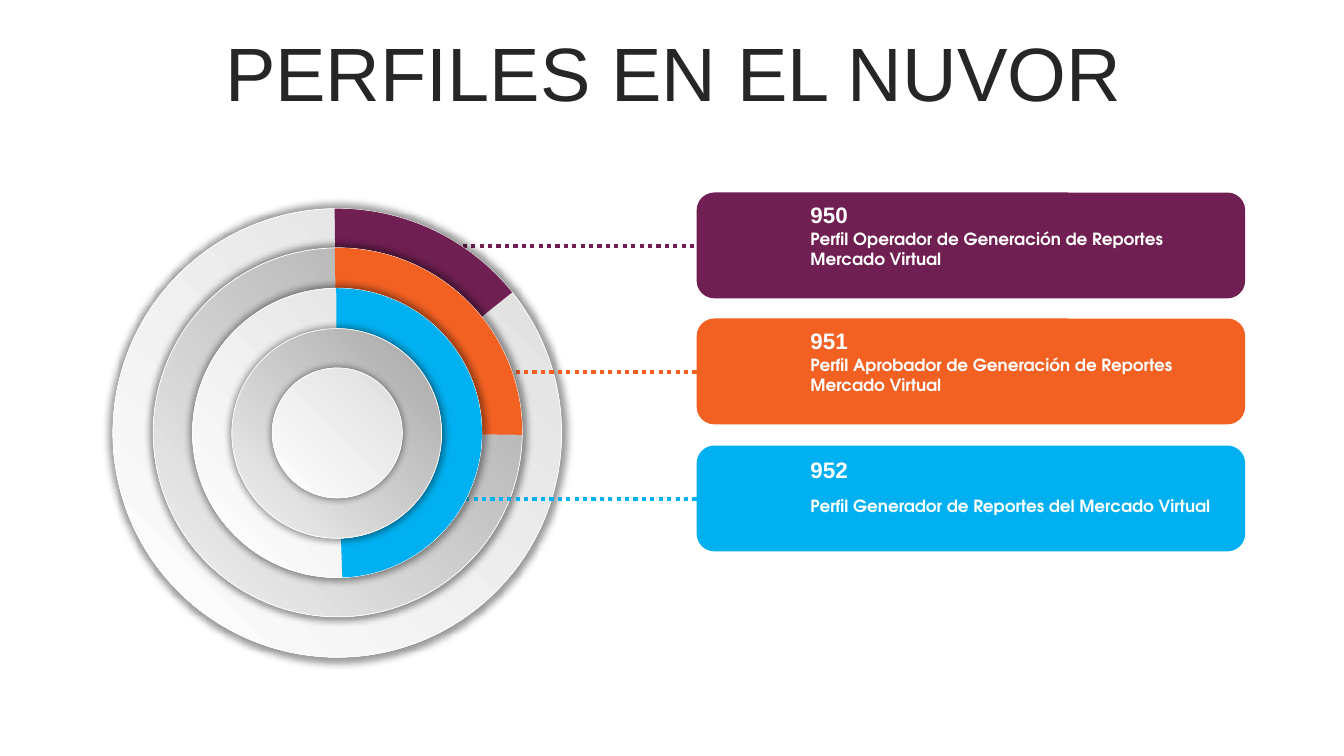
from dataclasses import dataclass

from lxml.etree import SubElement
from pptx import Presentation
from pptx.dml.color import RGBColor
from pptx.enum.dml import MSO_LINE
from pptx.enum.shapes import MSO_CONNECTOR, MSO_SHAPE
from pptx.enum.text import MSO_ANCHOR, MSO_AUTO_SIZE, PP_ALIGN
from pptx.oxml.ns import qn
from pptx.shapes.autoshape import Shape
from pptx.slide import Slide
from pptx.text.text import TextFrame
from pptx.util import Emu, Pt

EMU_PER_PX = 9144
CENTER_X, CENTER_Y = 334.5, 429.5
OUTER_DIAMETER, DIAMETER_STEP, RING_COUNT = 445, 79, 5
CARD_LEFT, CARD_WIDTH, CARD_HEIGHT = 691, 544, 105
TEXT_LEFT = 794


@dataclass(frozen=True)
class Theme:
    purple: str = "6F1F51"
    orange: str = "F26122"
    blue: str = "00B0F0"
    white: str = "FFFFFF"
    shadow: str = "000000"
    title_color: str = "262626"
    light_ring: tuple[str, str] = ("DEDEDE", "FFFFFF")
    dark_ring: tuple[str, str] = ("A6A6A6", "F2F2F2")
    heading_font: str = "Arial"
    body_font: str = "TeX Gyre Adventor"
    title_size: int = 54
    code_size: int = 16
    label_size: int = 12


@dataclass(frozen=True)
class Profile:
    code: str
    label: str
    color: str
    card_top: int
    code_top: int
    label_top: int
    label_width: int
    line_left: int
    start_angle: float
    end_angle: float


THEME = Theme()
PROFILES = [
    Profile("950", "Perfil Operador de Generación de Reportes Mercado Virtual",
            THEME.purple, 191, 195, 222, 419, 434, 269.33, 321.19),
    Profile("951", "Perfil Aprobador de Generación de Reportes Mercado Virtual",
            THEME.orange, 316, 320, 347, 440, 453, 269.1, 0.77),
    Profile("952", "Perfil Generador de Reportes del Mercado Virtual",
            THEME.blue, 442, 448, 487, 419, 453, 269.61, 87.97),
]


def px(length: float) -> Emu:
    return Emu(round(length) * EMU_PER_PX)


def rgb(color: str) -> RGBColor:
    return RGBColor.from_string(color)


def write_text(frame: TextFrame, text: str, *, font: str, size: int, color: str,
               bold: bool = False, align: PP_ALIGN = PP_ALIGN.LEFT,
               anchor: MSO_ANCHOR = MSO_ANCHOR.TOP,
               line_spacing: float = 1.0, space_before: int = 0) -> None:
    frame.word_wrap = True
    frame.auto_size = MSO_AUTO_SIZE.NONE
    frame.vertical_anchor = anchor
    para = frame.paragraphs[0]
    para.alignment = align
    para.line_spacing = line_spacing
    para.space_before = Pt(space_before)
    span = para.add_run()
    span.text = text
    span.font.name = font
    span.font.size = Pt(size)
    span.font.bold = bold
    span.font.color.rgb = rgb(color)


def add_title(page: Slide, text: str) -> None:
    title = page.shapes.title
    title.left, title.top, title.width, title.height = px(35), px(37), px(1266), px(79)
    write_text(title.text_frame, text, font=THEME.heading_font, size=THEME.title_size,
               color=THEME.title_color, align=PP_ALIGN.CENTER, anchor=MSO_ANCHOR.MIDDLE,
               line_spacing=0.9, space_before=10)


def add_shape(page: Slide, kind: MSO_SHAPE, left: float, top: float,
              width: int, height: int, color: str) -> Shape:
    shape = page.shapes.add_shape(kind, px(left), px(top), px(width), px(height))
    shape.shadow.inherit = False
    shape.fill.solid()
    shape.fill.fore_color.rgb = rgb(color)
    shape.line.fill.background()
    return shape


def add_circle_shape(page: Slide, kind: MSO_SHAPE, diameter: int, color: str) -> Shape:
    return add_shape(page, kind, CENTER_X - diameter / 2, CENTER_Y - diameter / 2,
                     diameter, diameter, color)


def add_glow_shadow(shape: Shape) -> None:
    effects = shape.element.spPr.find(qn("a:effectLst"))
    shadow = SubElement(effects, qn("a:outerShdw"), blurRad=str(Pt(5)), dist="0", dir="0",
                        sx="102000", sy="102000", algn="ctr", rotWithShape="0")
    tint = SubElement(shadow, qn("a:srgbClr"), val=THEME.shadow)
    SubElement(tint, qn("a:alpha"), val="40000")


def add_ring(page: Slide, diameter: int, shades: tuple[str, str]) -> None:
    ring = add_circle_shape(page, MSO_SHAPE.OVAL, diameter, shades[0])
    ring.fill.gradient()
    ring.fill.gradient_angle = 225
    for stop, position, shade in zip(ring.fill.gradient_stops, (0, 1), shades):
        stop.position = position
        stop.color.rgb = rgb(shade)
    ring.line.color.rgb = rgb(THEME.white)
    ring.line.width = Pt(0.5)
    add_glow_shadow(ring)


def add_sector(page: Slide, diameter: int, profile: Profile) -> None:
    sector = add_circle_shape(page, MSO_SHAPE.PIE, diameter, profile.color)
    for index, angle in enumerate((profile.start_angle, profile.end_angle)):
        sector.adjustments[index] = angle * 0.6


def add_leader(page: Slide, profile: Profile) -> None:
    height = px(profile.card_top + CARD_HEIGHT // 2 + 1)
    leader = page.shapes.add_connector(MSO_CONNECTOR.STRAIGHT, px(profile.line_left), height,
                                       px(CARD_LEFT), height)
    leader.line.color.rgb = rgb(profile.color)
    leader.line.width = Pt(3)
    leader.line.dash_style = MSO_LINE.ROUND_DOT
    SubElement(leader.element.spPr, qn("a:effectLst"))


def add_target(page: Slide) -> None:
    for index in range(RING_COUNT):
        diameter = OUTER_DIAMETER - DIAMETER_STEP * index
        profile = PROFILES[index] if index < len(PROFILES) else None
        if profile:
            add_leader(page, profile)
        add_ring(page, diameter, THEME.dark_ring if index % 2 else THEME.light_ring)
        if profile:
            add_sector(page, diameter, profile)


def add_caption(page: Slide, profile: Profile) -> None:
    code = page.shapes.add_textbox(px(TEXT_LEFT), px(profile.code_top), px(419), px(37))
    write_text(code.text_frame, profile.code, font=THEME.heading_font,
               size=THEME.code_size, color=THEME.white, bold=True)
    label = page.shapes.add_textbox(px(TEXT_LEFT), px(profile.label_top),
                                    px(profile.label_width), px(50))
    write_text(label.text_frame, profile.label, font=THEME.body_font,
               size=THEME.label_size, color=THEME.white, bold=True)


def main() -> None:
    deck = Presentation()
    deck.slide_width, deck.slide_height = px(1333), px(750)
    page = deck.slides.add_slide(deck.slide_layouts[5])
    add_title(page, "PERFILES EN EL NUVOR")
    for profile in PROFILES:
        add_shape(page, MSO_SHAPE.ROUNDED_RECTANGLE, CARD_LEFT, profile.card_top,
                  CARD_WIDTH, CARD_HEIGHT, profile.color)
    add_target(page)
    for profile in PROFILES:
        add_caption(page, profile)
    deck.save("out.pptx")


if __name__ == "__main__":
    main()
